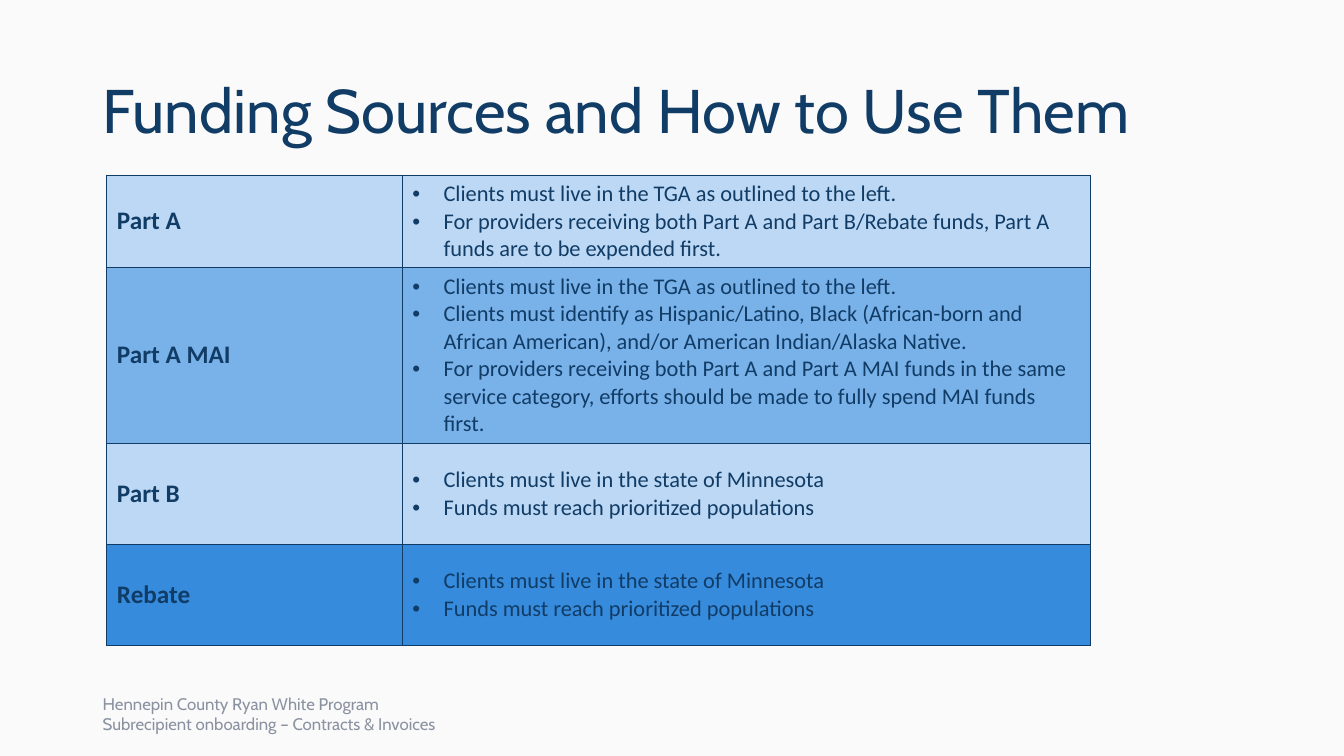
from lxml.etree import SubElement
from pptx import Presentation
from pptx.dml.color import RGBColor
from pptx.enum.text import MSO_ANCHOR, PP_ALIGN
from pptx.oxml.ns import qn
from pptx.util import Inches, Pt

NAVY = RGBColor(0x11, 0x3C, 0x66)
GRAY = RGBColor(0x8A, 0x91, 0xA0)
PAPER = RGBColor(0xFA, 0xFA, 0xFA)
PALE_BLUE = RGBColor(0xBC, 0xD8, 0xF4)
MID_BLUE = RGBColor(0x79, 0xB1, 0xE9)
STRONG_BLUE = RGBColor(0x36, 0x8B, 0xDD)

TITLE = "Funding Sources and How to Use Them"
FOOTER = ["Hennepin County Ryan White Program",
          "Subrecipient onboarding – Contracts & Invoices"]
TGA_RULE = "Clients must live in the TGA as outlined to the left."
STATE_RULES = ["Clients must live in the state of Minnesota",
               "Funds must reach prioritized populations"]
# source, rules, row colour, row height
FUNDING = [
    ("Part A", [
        TGA_RULE,
        "For providers receiving both Part A and Part B/Rebate funds, "
        "Part A funds are to be expended first.",
    ], PALE_BLUE, 0.91),
    ("Part A MAI", [
        TGA_RULE,
        "Clients must identify as Hispanic/Latino, Black (African-born and "
        "African American), and/or American Indian/Alaska Native.",
        "For providers receiving both Part A and Part A MAI funds in the same "
        "service category, efforts should be made to fully spend MAI funds first.",
    ], MID_BLUE, 1.75),
    ("Part B", STATE_RULES, PALE_BLUE, 1),
    ("Rebate", STATE_RULES, STRONG_BLUE, 1),
]
COLUMN_WIDTHS = [2.93, 6.83]
BULLET_INDENT = Inches(0.31)


def write(frame, lines, font_name, size, color, bold=False, bulleted=False):
    frame.text = "\n".join(lines)
    frame.word_wrap = True
    for paragraph in frame.paragraphs:
        paragraph.alignment = PP_ALIGN.LEFT
        if bulleted:
            properties = paragraph._p.get_or_add_pPr()
            properties.set("marL", str(BULLET_INDENT))
            properties.set("indent", str(-BULLET_INDENT))
            SubElement(properties, qn("a:buFont"), typeface="Arial")
            SubElement(properties, qn("a:buChar"), char="•")
        for run in paragraph.runs:
            run.font.name = font_name
            run.font.size = Pt(size)
            run.font.bold = bold
            run.font.color.rgb = color


def style_cell(cell, color):
    """Draw the four borders, then the fill, in the order the schema asks for."""
    properties = cell._tc.get_or_add_tcPr()
    for side in ("lnL", "lnR", "lnT", "lnB"):
        border = SubElement(properties, qn(f"a:{side}"), w=str(Pt(1)))
        border_fill = SubElement(border, qn("a:solidFill"))
        SubElement(border_fill, qn("a:srgbClr"), val=str(NAVY))
    cell.fill.solid()
    cell.fill.fore_color.rgb = color
    cell.vertical_anchor = MSO_ANCHOR.MIDDLE


def main():
    deck = Presentation()
    deck.slide_width, deck.slide_height = Inches(13.33), Inches(7.5)
    slide = deck.slides.add_slide(deck.slide_layouts[5])
    slide.background.fill.solid()
    slide.background.fill.fore_color.rgb = PAPER

    title = slide.shapes.title
    title.left, title.top = Inches(0.92), Inches(0.4)
    title.width, title.height = Inches(11.5), Inches(1.45)
    write(title.text_frame, [TITLE], "Cabin", 44, NAVY)
    title.text_frame.vertical_anchor = MSO_ANCHOR.MIDDLE
    title.text_frame.paragraphs[0].line_spacing = 0.9

    footer = slide.shapes.add_textbox(
        Inches(0.92), Inches(6.88), Inches(4.09), Inches(0.4))
    write(footer.text_frame, FOOTER, "Cabin", 12, GRAY)
    footer.text_frame.vertical_anchor = MSO_ANCHOR.MIDDLE

    total_height = sum(height for *_, height in FUNDING)
    table = slide.shapes.add_table(
        len(FUNDING), len(COLUMN_WIDTHS), Inches(1.06), Inches(1.74),
        Inches(sum(COLUMN_WIDTHS)), Inches(total_height)).table
    table.first_row = table.horz_banding = False
    for column, width in zip(table.columns, COLUMN_WIDTHS):
        column.width = Inches(width)
    for row, (source, rules, color, height) in zip(table.rows, FUNDING):
        row.height = Inches(height)
        source_cell, rules_cell = row.cells
        write(source_cell.text_frame, [source], "Calibri", 18, NAVY, bold=True)
        write(rules_cell.text_frame, rules, "Calibri", 16, NAVY, bulleted=True)
        for cell in (source_cell, rules_cell):
            style_cell(cell, color)

    deck.save("out.pptx")


if __name__ == "__main__":
    main()
